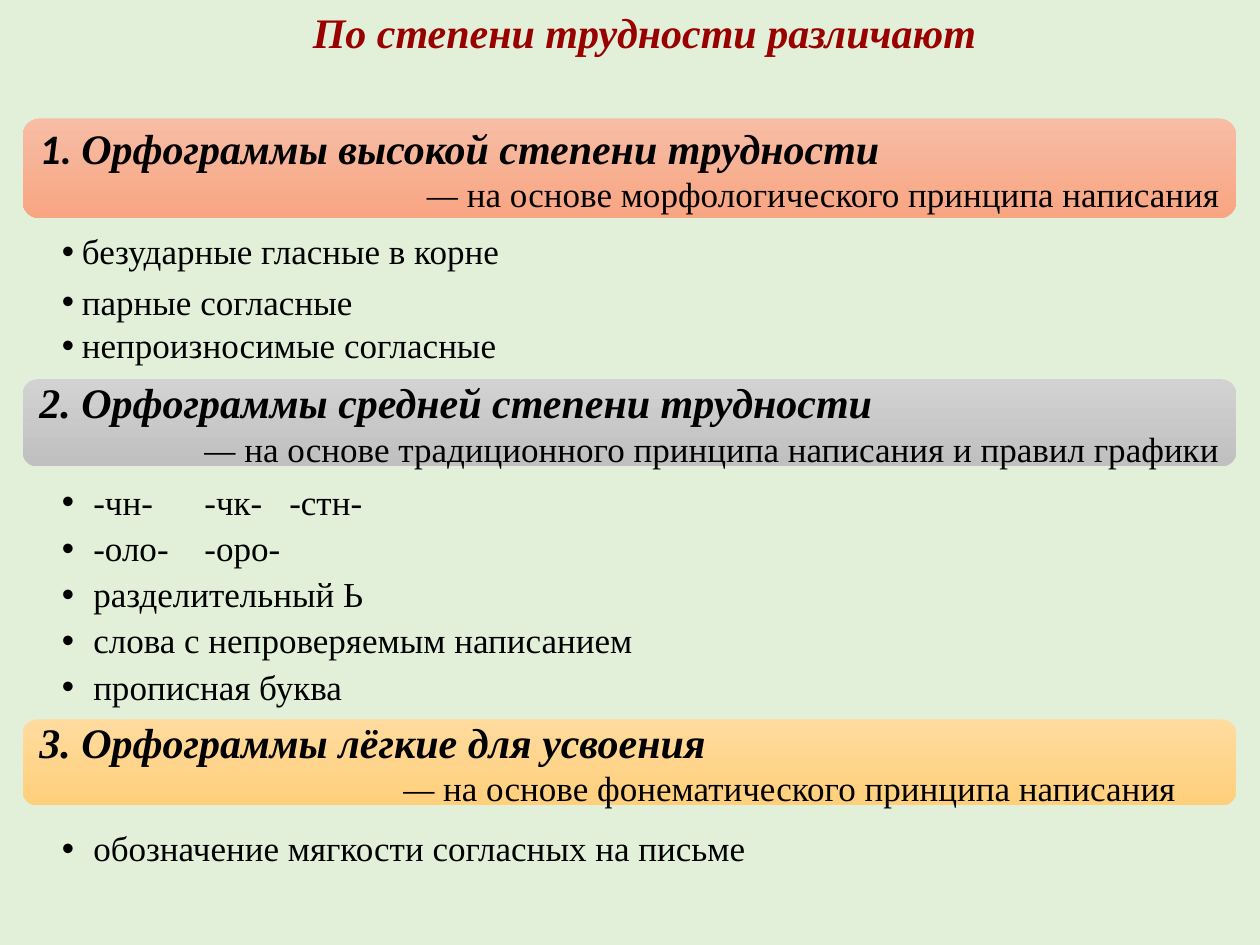
from lxml.etree import SubElement
from pptx import Presentation
from pptx.dml.color import RGBColor
from pptx.enum.shapes import MSO_SHAPE as Shape
from pptx.enum.text import MSO_ANCHOR as Anchor, PP_ALIGN as Align
from pptx.oxml.ns import qn
from pptx.util import Pt

COLORS = {
    "page": "E2F0D9", "title": "990000", "text": "000000",
    "high": ("F7BDA5", "F8A582"),
    "middle": ("D2D2D2", "C0C0C0"),
    "easy": ("FFDB9E", "FFD07C"),
}
SERIF = "Times New Roman"
LEFT, WIDTH = 13, 693.4

# Each band and list: top and height; gap is the space between bullets.
SECTIONS = [
    dict(color="high", band=(67.7, 56.9), number="1. ", number_font="Calibri",
         heading="Орфограммы высокой степени трудности",
         basis="на основе морфологического принципа написания",
         items=["безударные гласные в корне", "парные согласные", "непроизносимые согласные"],
         list_box=(131.8, 96.5), indent=11.5, gaps=(7.3, 3.3)),
    dict(color="middle", band=(216.7, 49.7), number="2. ",
         heading="Орфограммы средней степени трудности",
         basis="на основе традиционного принципа написания и правил графики",
         items=["-чн-\t-чк-\t-стн-", "-оло-\t-оро-", "разделительный Ь",
                "слова с непроверяемым написанием", "прописная буква"],
         list_box=(275, 118.8), indent=18, gaps=(4.8,) * 4, tabs=(81.5, 130)),
    dict(color="easy", band=(411.1, 49), number="3. ",
         heading="Орфограммы лёгкие для усвоения",
         basis="на основе фонематического принципа написания", right_inset=32,
         items=["обозначение мягкости согласных на письме"],
         list_box=(460.1, 44.6), indent=18, top_inset=15),
]


def add_span(para, text, size=20, color="text", font=SERIF, bold=False, italic=False):
    span = para.add_run()
    span.text = text
    span.font.size = Pt(size)
    span.font.name = font
    span.font.bold = bold
    span.font.italic = italic
    span.font.color.rgb = RGBColor.from_string(COLORS[color])


def add_text_box(page, left, top, width, height, insets, anchor=Anchor.TOP):
    """Return the frame of a wrapped box; insets run left, top, right, bottom."""
    box = page.shapes.add_textbox(Pt(left), Pt(top), Pt(width), Pt(height))
    frame = box.text_frame
    frame.word_wrap = True
    frame.vertical_anchor = anchor
    frame.margin_left, frame.margin_top, frame.margin_right, frame.margin_bottom = map(Pt, insets)
    return frame


def add_bullet(para, indent, tabs):
    props = para._p.get_or_add_pPr()
    props.set("marL", str(Pt(indent)))
    props.set("indent", str(-Pt(indent)))
    SubElement(props, qn("a:buFont"), typeface="Arial")
    SubElement(props, qn("a:buChar"), char="•")
    if tabs:
        stops = SubElement(props, qn("a:tabLst"))
        for position in tabs:
            SubElement(stops, qn("a:tab"), pos=str(Pt(position)), algn="l")


def add_title(page, left, top, width, height):
    frame = add_text_box(page, left, top, width, height, (7.2, 3.6, 7.2, 3.6))
    para = frame.paragraphs[0]
    para.alignment = Align.CENTER
    add_span(para, "По степени трудности различают", size=24, color="title",
             bold=True, italic=True)


def add_band(page, left, top, width, height, color, number, heading, basis,
             number_font=SERIF, right_inset=7.2):
    band = page.shapes.add_shape(Shape.ROUNDED_RECTANGLE, Pt(left), Pt(top), Pt(width), Pt(height))
    band.shadow.inherit = False
    band.line.fill.background()
    band.fill.gradient()
    band.fill.gradient_angle = 270
    for stop, shade in zip(band.fill.gradient_stops, COLORS[color]):
        stop.color.rgb = RGBColor.from_string(shade)

    frame = add_text_box(page, left + 2.4, top + 2.6, width - 4.8, height - 5,
                         (7.2, 7.2, right_inset, 7.2), Anchor.MIDDLE)
    para = frame.paragraphs[0]
    add_span(para, number, size=24, font=number_font, bold=True, italic=True)
    add_span(para, heading, size=24, bold=True, italic=True)
    para = frame.add_paragraph()
    para.alignment = Align.RIGHT
    add_span(para, "— ", italic=True)
    add_span(para, basis)


def add_list(page, left, top, width, height, items, indent, gaps=(), tabs=(), top_inset=2.2):
    frame = add_text_box(page, left, top, width, height, (22.3, top_inset, 11.5, 2.2))
    for i, item in enumerate(items):
        para = frame.add_paragraph() if i else frame.paragraphs[0]
        para.line_spacing = 0.9
        para.space_after = Pt(gaps[i] if i < len(gaps) else 0)
        add_bullet(para, indent, tabs if "\t" in item else ())
        add_span(para, item)


def add_section(page, left, width, band, list_box, items, indent,
                gaps=(), tabs=(), top_inset=2.2, **band_format):
    add_band(page, left, band[0], width, band[1], **band_format)
    add_list(page, left, list_box[0], width, list_box[1], items, indent, gaps, tabs, top_inset)


def main():
    deck = Presentation()
    deck.slide_width, deck.slide_height = Pt(720), Pt(540)
    page = deck.slides.add_slide(deck.slide_layouts[6])
    page.background.fill.solid()
    page.background.fill.fore_color.rgb = RGBColor.from_string(COLORS["page"])
    for section in SECTIONS:
        add_section(page, LEFT, WIDTH, **section)
    add_title(page, 16.6, 0, 703.4, 36)
    deck.save("out.pptx")


if __name__ == "__main__":
    main()
